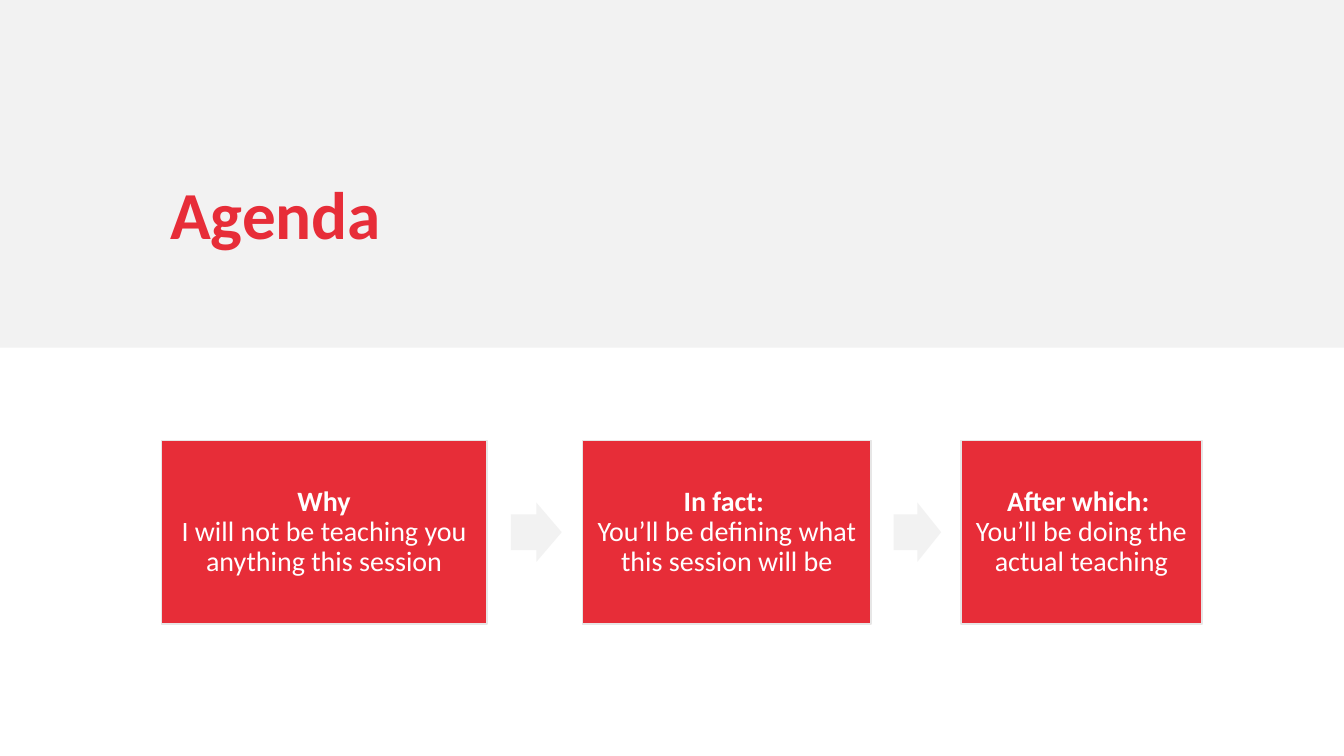
from pptx import Presentation
from pptx.dml.color import RGBColor
from pptx.enum.shapes import MSO_SHAPE
from pptx.enum.text import MSO_ANCHOR, PP_ALIGN
from pptx.util import Emu, Pt

PX = 9144  # 100 px to the inch
WIDE, HIGH = 1333, 750
FONT = "Calibri"
INK = {"red": "E72D38", "pale": "F2F2F2", "edge": "E7E6E6", "white": "FFFFFF"}

# left, width, text; \v breaks a line within a paragraph
STEPS = [
    (160, 323, "Why\nI will not be teaching you anything this session"),
    (578, 286, "In fact: \vYou’ll be defining what this session will be"),
    (953, 239, "After which: \vYou’ll be doing the actual teaching"),
]


def color(name):
    return RGBColor.from_string(INK[name])


def scale(*sizes):
    return [Emu(round(size * PX)) for size in sizes]


def pad(frame, side, top):
    frame.word_wrap = True
    frame.margin_left = frame.margin_right = Emu(side * PX)
    frame.margin_top = frame.margin_bottom = Emu(top * PX)


def style(run, size, ink, bold):
    font = run.font
    font.name, font.size, font.bold = FONT, Pt(size), bold
    font.color.rgb = color(ink)


def block(slide, kind, box, fill, edge=None):
    """Add a flat preset shape, outlined only when an edge colour is given."""
    shape = slide.shapes.add_shape(kind, *scale(*box))
    shape.shadow.inherit = False
    shape.fill.solid()
    shape.fill.fore_color.rgb = color(fill)
    if edge:
        shape.line.color.rgb = color(edge)
        shape.line.width = Pt(1)
    else:
        shape.line.fill.background()
    return shape


def header(slide, box, title):
    left, top, _, _ = box
    block(slide, MSO_SHAPE.RECTANGLE, box, "pale")
    frame = slide.shapes.add_textbox(
        *scale(left + 159, top + 182, 781, 76)).text_frame
    pad(frame, 10, 5)
    frame.text = title
    line = frame.paragraphs[0]
    line.line_spacing = 0.8
    style(line.runs[0], 48, "red", True)


def card(slide, box, text):
    """Add a step whose first run is bold."""
    frame = block(slide, MSO_SHAPE.RECTANGLE, box, "red", "edge").text_frame
    pad(frame, 8, 8)
    frame.vertical_anchor = MSO_ANCHOR.MIDDLE
    frame.text = text
    for line in frame.paragraphs:
        line.alignment = PP_ALIGN.CENTER
        line.line_spacing = 0.9
    runs = [run for line in frame.paragraphs for run in line.runs]
    for i, run in enumerate(runs):
        style(run, 20, "white", i == 0)


def arrow(slide, box):
    """Add an arrow inside the gap between two cards."""
    left, top, gap, high = box
    tall = 59
    place = (left + gap * 0.25, top + (high - tall) / 2, gap * 0.53, tall)
    shape = block(slide, MSO_SHAPE.RIGHT_ARROW, place, "pale")
    shape.adjustments[0] = 0.6
    shape.adjustments[1] = 0.5


def flow(slide, box, steps):
    left, top, _, high = box
    first = steps[0][0]
    end = None
    for start, wide, text in steps:
        x = left + start - first
        if end is not None:
            arrow(slide, (end, top, x - end, high))
        card(slide, (x, top, wide, high), text)
        end = x + wide


def main():
    deck = Presentation()
    deck.slide_width, deck.slide_height = scale(WIDE, HIGH)
    slide = deck.slides.add_slide(deck.slide_layouts[6])
    header(slide, (0, 0, WIDE, 345), "Agenda")
    flow(slide, (160, 437, 1032, 182), STEPS)
    deck.save("out.pptx")


if __name__ == "__main__":
    main()
